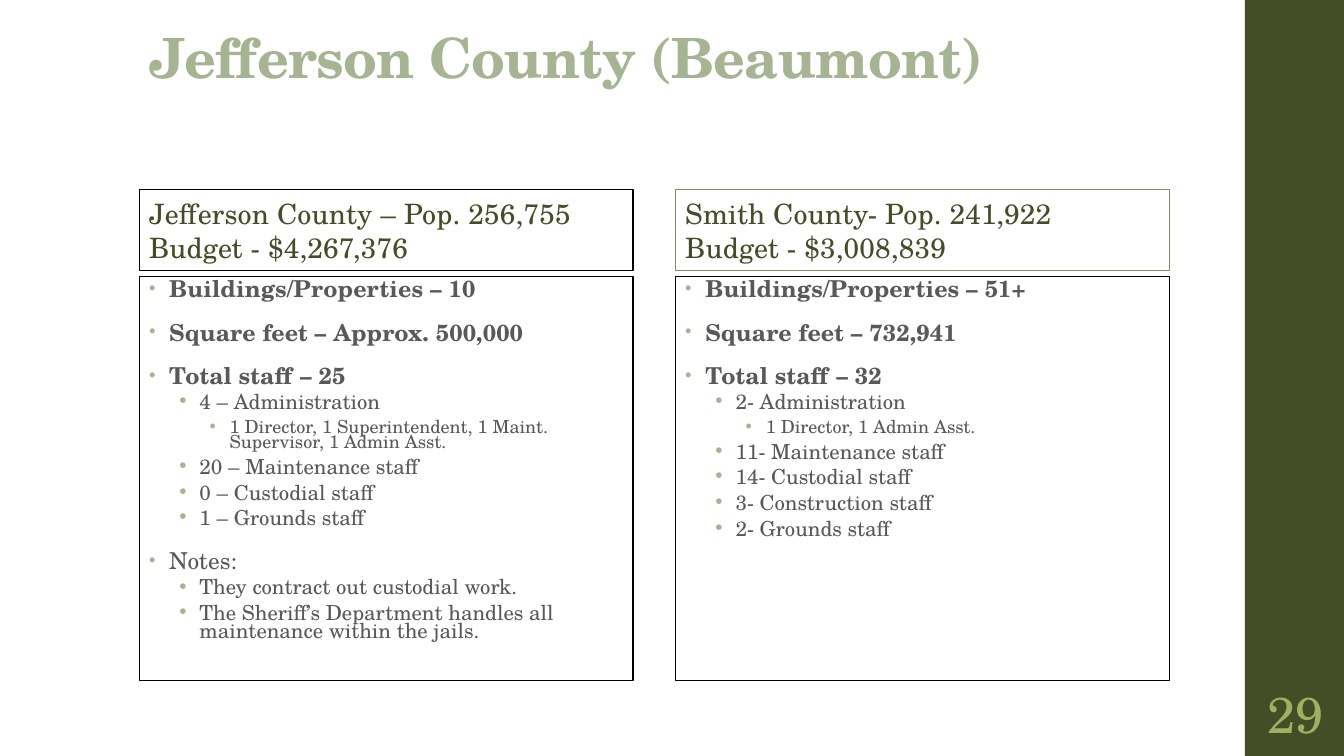
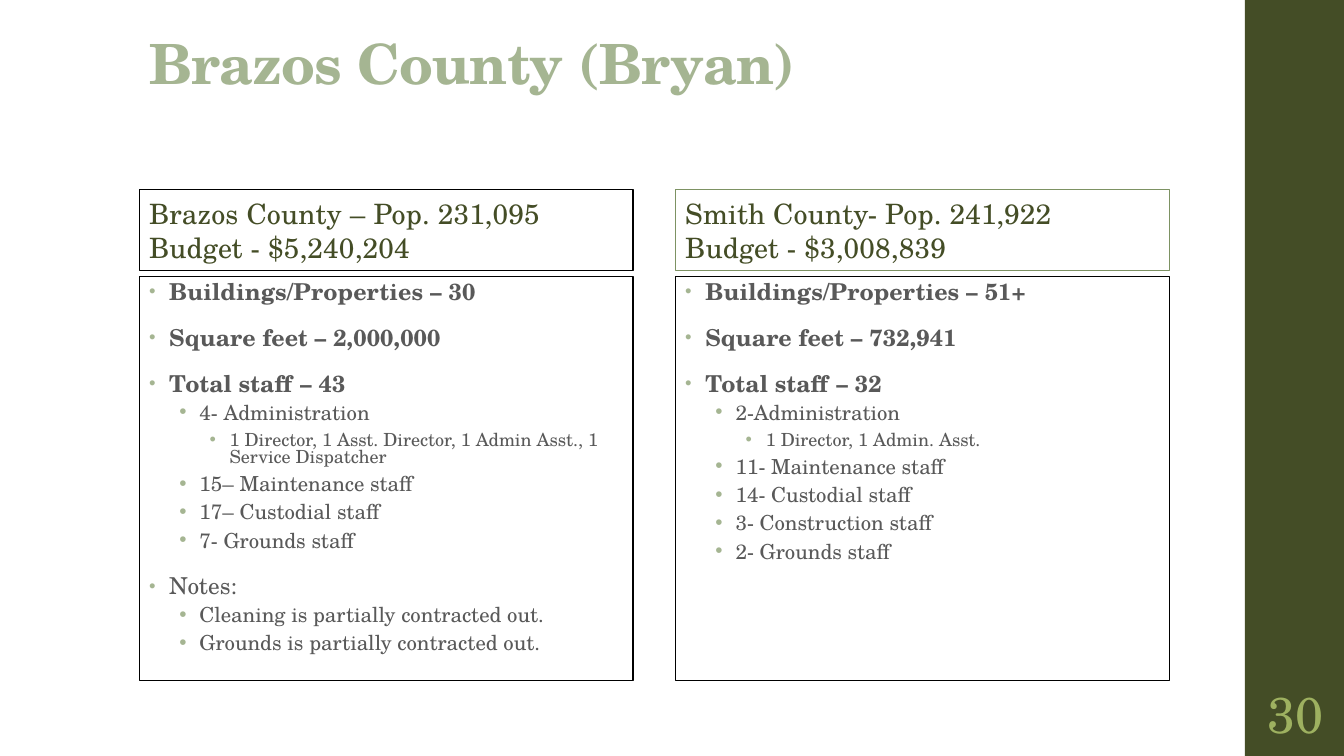
from dataclasses import dataclass

from lxml.etree import SubElement
from pptx import Presentation
from pptx.dml.color import RGBColor
from pptx.enum.shapes import MSO_SHAPE
from pptx.enum.text import MSO_ANCHOR, PP_ALIGN
from pptx.oxml.ns import qn
from pptx.util import Pt

FONT = "TeX Gyre Schola"
BLACK, OLIVE, SAGE, MOSS, LIME, GREY = "000000", "444D26", "A5B592", "7D9263", "9EB160", "595959"

WIDTH, HEIGHT = 960, 540
BAND_LEFT = 889.2
COLUMN_LEFTS = (99.4, 482.4)
COLUMN_WIDTH = 352.8


@dataclass(frozen=True)
class Level:
    depth: int
    size: float
    before: float
    after: float
    tightening: float = 0
    bold: bool = False
    tracking: int = 0
    bullet_percent: int = 100


FACT = Level(0, 16.6, 14, 2, bold=True, tracking=10, bullet_percent=80)
NOTE = Level(0, 16.6, 14, 2, tracking=10, bullet_percent=80)
STAFF = Level(1, 14.8, 3, 3, tightening=0.05)
DETAIL = Level(2, 12.9, 3, 3, tightening=0.05)


def rgb(code):
    return RGBColor.from_string(code)


class Deck:
    def __init__(self):
        self.presentation = Presentation()
        self.presentation.slide_width = Pt(WIDTH)
        self.presentation.slide_height = Pt(HEIGHT)
        self.slide = None

    def new_slide(self, number):
        self.slide = self.presentation.slides.add_slide(self.presentation.slide_layouts[6])
        self.rectangle(BAND_LEFT, 0, WIDTH - BAND_LEFT, HEIGHT, fill=OLIVE)
        frame = self.text_area(BAND_LEFT, 486, 72, 46.8, MSO_ANCHOR.MIDDLE)
        frame.margin_left = frame.margin_right = Pt(3.6)
        self.style_text(frame.paragraphs[0], str(number), 36, LIME).alignment = PP_ALIGN.CENTER

    def rectangle(self, left, top, width, height, fill=None, line=None):
        shape = self.slide.shapes.add_shape(
            MSO_SHAPE.RECTANGLE, Pt(left), Pt(top), Pt(width), Pt(height))
        shape.shadow.inherit = False
        if fill:
            shape.fill.solid()
            shape.fill.fore_color.rgb = rgb(fill)
        else:
            shape.fill.background()
        if line:
            shape.line.color.rgb = rgb(line)
            shape.line.width = Pt(0.75)
        else:
            shape.line.fill.background()
        return shape

    def text_area(self, left, top, width, height, anchor):
        box = self.slide.shapes.add_textbox(Pt(left), Pt(top), Pt(width), Pt(height))
        frame = box.text_frame
        frame.word_wrap = True
        frame.vertical_anchor = anchor
        return frame

    def style_text(self, paragraph, text, size, color, bold=False, tracking=0):
        paragraph.text = text
        paragraph.alignment = PP_ALIGN.LEFT
        font = paragraph.font
        font.name, font.size, font.bold = FONT, Pt(size), bold
        font.color.rgb = rgb(color)
        paragraph._p.get_or_add_pPr().get_or_add_defRPr().set("spc", str(tracking))
        return paragraph

    def title(self, text, height):
        frame = self.text_area(COLUMN_LEFTS[0], 20.9, 763.2, height, MSO_ANCHOR.BOTTOM)
        frame.margin_top = Pt(2.2)
        self.style_text(frame.paragraphs[0], text, 39.6, SAGE, True, -50).line_spacing = 0.9

    def heading(self, left, lines, border):
        frame = self.rectangle(left, 135.4, COLUMN_WIDTH, 57.6, line=border).text_frame
        frame.vertical_anchor = MSO_ANCHOR.BOTTOM
        for paragraph, text in self.paragraphs(frame, lines):
            self.style_text(paragraph, text, 20, OLIVE, tracking=10)
            paragraph.line_spacing = 0.95
            paragraph.space_after = Pt(2)

    def details(self, left, items, spacing):
        frame = self.rectangle(left, 197.3, COLUMN_WIDTH, 288.7, line=BLACK).text_frame
        frame.vertical_anchor = MSO_ANCHOR.TOP
        for paragraph, (level, text) in self.paragraphs(frame, items):
            self.style_text(paragraph, text, level.size, GREY, level.bold, level.tracking)
            paragraph.level = level.depth
            paragraph.line_spacing = round(spacing - level.tightening, 2)
            paragraph.space_before = Pt(level.before)
            paragraph.space_after = Pt(level.after)
            self.bullet(paragraph, level)

    def paragraphs(self, frame, items):
        for index, item in enumerate(items):
            yield (frame.add_paragraph() if index else frame.paragraphs[0]), item

    def bullet(self, paragraph, level):
        properties = paragraph._p.get_or_add_pPr()
        properties.set("marL", str(Pt(14.4 + 21.6 * level.depth)))
        properties.set("indent", str(Pt(-14.4)))
        color = SubElement(properties, qn("a:buClr"))
        SubElement(color, qn("a:srgbClr")).set("val", SAGE)
        size = SubElement(properties, qn("a:buSzPct"))
        size.set("val", str(level.bullet_percent * 1000))
        typeface = SubElement(properties, qn("a:buFont"))
        typeface.set("typeface", "Arial")
        mark = SubElement(properties, qn("a:buChar"))
        mark.set("char", "•")
        properties.append(properties.get_or_add_defRPr())

    def comparison(self, number, title, title_height, spacing, columns):
        self.new_slide(number)
        self.title(title, title_height)
        for left, border, (lines, items) in zip(COLUMN_LEFTS, (BLACK, MOSS), columns):
            self.heading(left, lines, border)
            self.details(left, items, spacing)


def smith_county(administration, people):
    return (
        ("Smith County- Pop. 241,922", "Budget - $3,008,839"),
        (
            (FACT, "Buildings/Properties – 51+"),
            (FACT, "Square feet – 732,941"),
            (FACT, "Total staff – 32"),
            (STAFF, administration),
            (DETAIL, people),
            (STAFF, "11- Maintenance staff"),
            (STAFF, "14- Custodial staff"),
            (STAFF, "3- Construction staff"),
            (STAFF, "2- Grounds staff"),
        ),
    )


JEFFERSON_COUNTY = (
    ("Jefferson County – Pop. 256,755", "Budget - $4,267,376"),
    (
        (FACT, "Buildings/Properties – 10"),
        (FACT, "Square feet – Approx. 500,000"),
        (FACT, "Total staff – 25"),
        (STAFF, "4 – Administration"),
        (DETAIL, "1 Director, 1 Superintendent, 1 Maint. Supervisor, 1 Admin Asst."),
        (STAFF, "20 – Maintenance staff"),
        (STAFF, "0 – Custodial staff"),
        (STAFF, "1 – Grounds staff"),
        (NOTE, "Notes:"),
        (STAFF, "They contract out custodial work."),
        (STAFF, "The Sheriff’s Department handles all maintenance within the jails."),
    ),
)

BRAZOS_COUNTY = (
    ("Brazos County – Pop. 231,095", "Budget - $5,240,204"),
    (
        (FACT, "Buildings/Properties – 30"),
        (FACT, "Square feet – 2,000,000"),
        (FACT, "Total staff – 43"),
        (STAFF, "4- Administration"),
        (DETAIL, "1 Director, 1 Asst. Director, 1 Admin Asst., 1 Service Dispatcher"),
        (STAFF, "15– Maintenance staff"),
        (STAFF, "17– Custodial staff"),
        (STAFF, "7- Grounds staff"),
        (NOTE, "Notes:"),
        (STAFF, "Cleaning is partially contracted out."),
        (STAFF, "Grounds is partially contracted out."),
    ),
)


def main():
    deck = Deck()
    deck.comparison(
        29, "Jefferson County (Beaumont)", 47.5, 0.75,
        (JEFFERSON_COUNTY, smith_county("2- Administration", "1 Director, 1 Admin Asst.")))
    deck.comparison(
        30, "Brazos County (Bryan)", 51.8, 0.85,
        (BRAZOS_COUNTY, smith_county("2-Administration", "1 Director, 1 Admin. Asst.")))
    deck.presentation.save("out.pptx")


if __name__ == "__main__":
    main()
